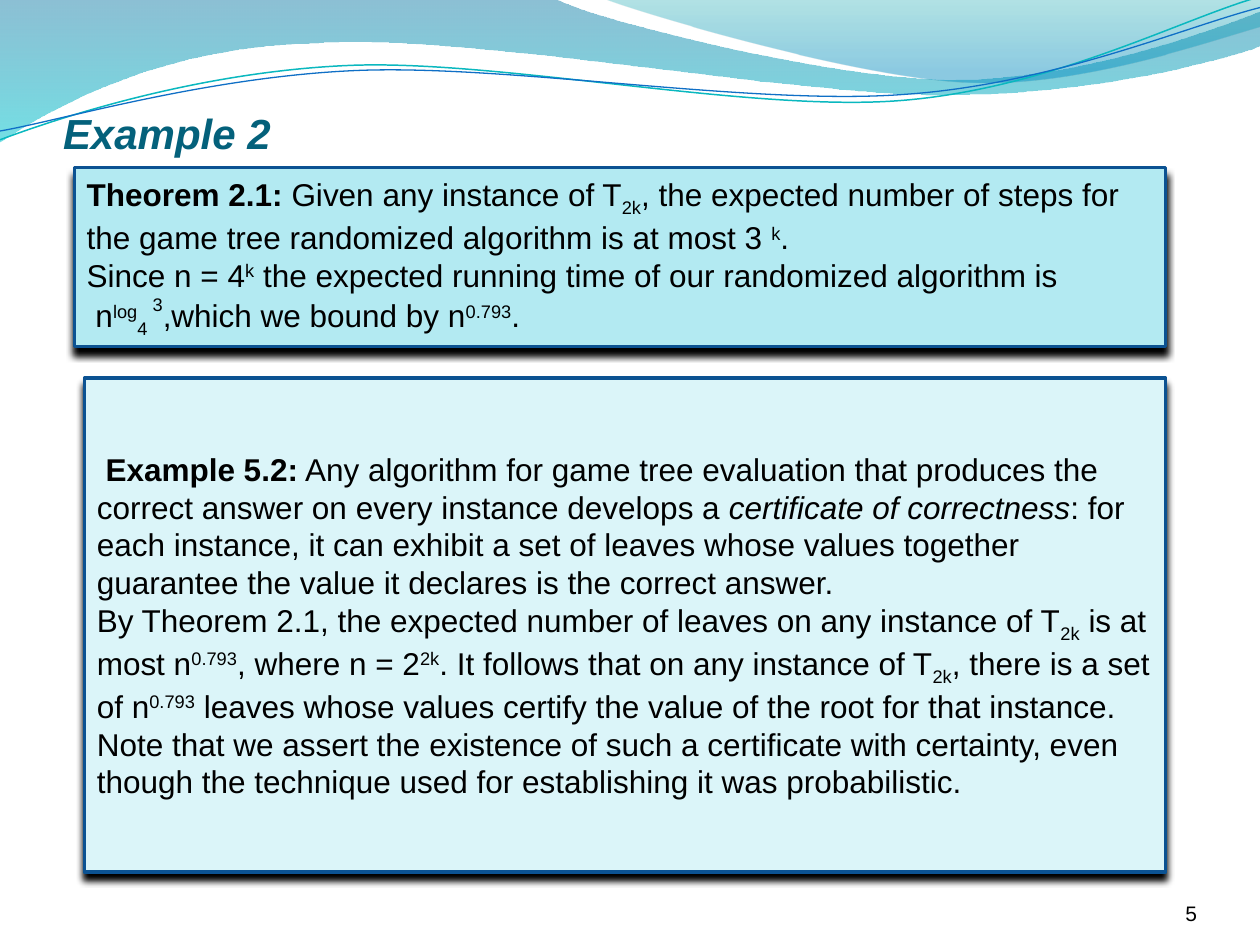
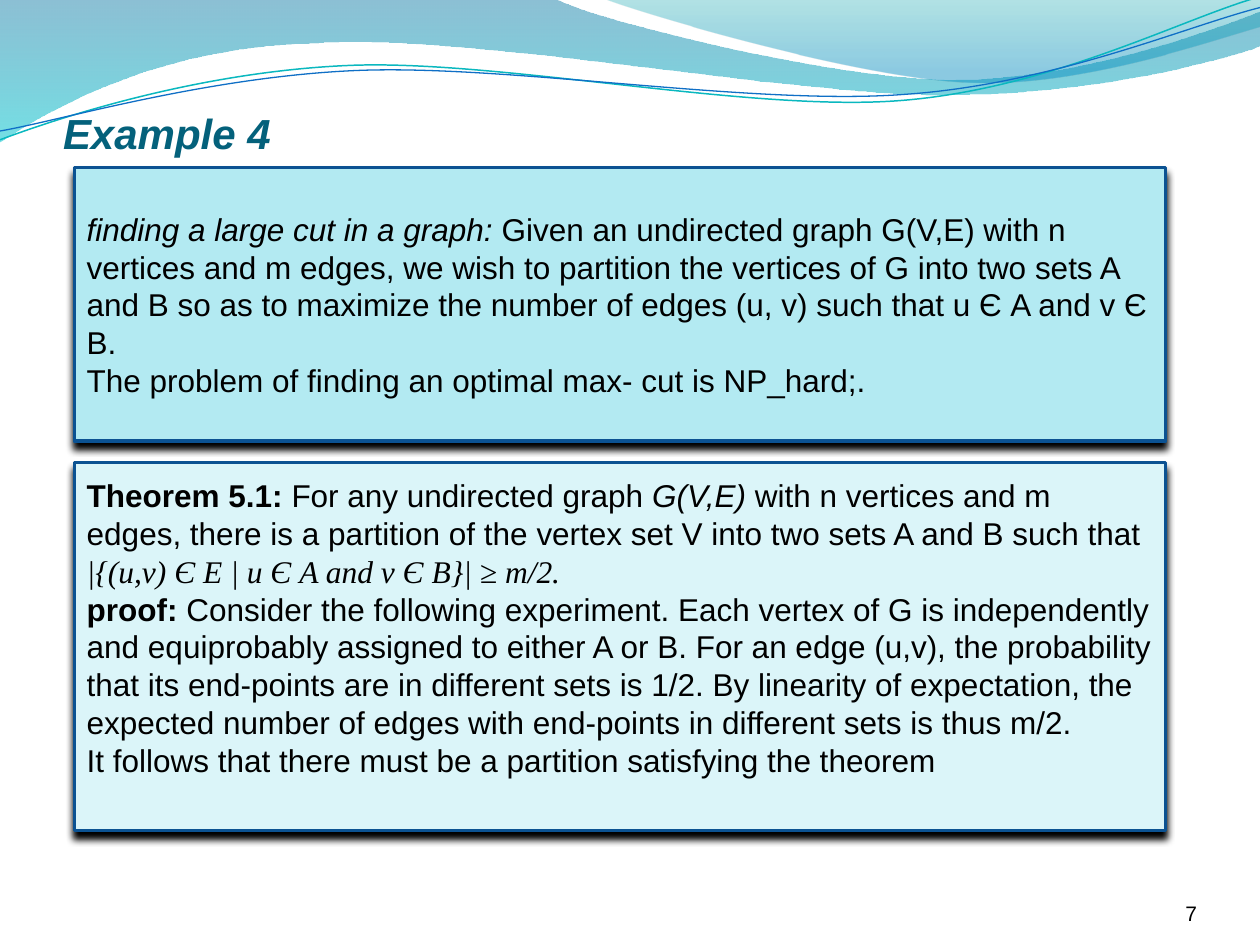
from typing import NamedTuple

from lxml import etree
from pptx import Presentation, util as u
from pptx.dml.color import RGBColor
from pptx.enum import shapes as shp, text as txt
from pptx.oxml import ns

COLORS = {
    "title": "04617B", "ink": "000000", "statement": "B3EAF2", "argument": "DBF5F9",
    "border": "0B5292", "deep": "0074A1", "aqua": "00C6CF", "teal": "00A1A9",
    "sky": "008BBF", "teal line": "0AB8BF", "blue line": "0F6FC6",
}
SANS, SERIF = "Arial", "Times New Roman"
EDGE, PANEL_WIDTH = 0.59, 8.66


class Run(NamedTuple):
    """A stretch of text with one format; base is the raise in percent."""
    text: str
    bold: bool = False
    italic: bool = False
    base: int = 0
    font: str = SANS


class Stop(NamedTuple):
    """A gradient stop with its opacity in percent."""
    position: float
    color: str
    opacity: int


class Wave(NamedTuple):
    """A curved outline: segments are lines when pairs, Bezier curves when sixes."""
    start: tuple
    segments: list
    stops: tuple = ()
    line: str = ""
    weight: float = 0


class Panel(NamedTuple):
    """A bordered text panel."""
    left: float
    top: float
    width: float
    height: float
    fill: str
    paragraphs: list
    bottom_inset: float = 0.05


class Page(NamedTuple):
    """The content of one slide."""
    title: str
    number: str
    panels: list


WAVES = [
    Wave((0, 0), [(4.4, -0.01), (4.76, 0.17, 6.64, 0.63, 7.58, 0.63),
                  (8.53, 0.63, 9.58, 0.26, 10, 0.09), (10.01, 0.36),
                  (9.83, 0.44, 8.7, 0.76, 7.46, 0.75), (6.22, 0.75, 3.82, 0.28, 2.57, 0.34),
                  (1.29, 0.36, 0.46, 0.83, -0.01, 1.13), (0, 0)],
         stops=(Stop(0, "deep", 45), Stop(1, "aqua", 55))),
    Wave((4.79, -0.01), [(5.09, 0.11, 6.82, 0.62, 7.69, 0.65),
                         (8.56, 0.69, 9.61, 0.32, 10, 0.21), (10, 0), (4.79, -0.01)],
         stops=(Stop(0, "teal", 30), Stop(0.8, "sky", 45))),
    Wave((0, 1.11), [(0.48, 0.93, 1.58, 0.57, 2.77, 0.52), (3.95, 0.47, 5.93, 0.89, 7.13, 0.8),
                     (8.33, 0.71, 9.38, 0.15, 9.98, -0.02)], line="teal line", weight=0.85),
    Wave((0, 1.04), [(0.47, 0.96, 1.64, 0.61, 2.83, 0.56), (4.03, 0.51, 5.97, 0.84, 7.17, 0.75),
                     (8.36, 0.67, 9.41, 0.21, 10, 0.06)], line="blue line", weight=0.75),
]


def sub(label: str) -> Run:
    """Return a subscript run."""
    return Run(label, base=-25)


def sup(label: str) -> Run:
    """Return a superscript run."""
    return Run(label, base=30)


PAGES = [
    Page("Example 2", "5", [
        Panel(EDGE, 1.33, PANEL_WIDTH, 1.42, "statement", [
            [Run("Theorem 2.1: ", bold=True), Run("Given any instance of T"), sub("2k"),
             Run(", the expected number of steps for the game tree randomized algorithm "
                 "is at most 3 "), sup("k"), Run(".")],
            [Run("Since n = 4"), sup("k"),
             Run(" the expected running time of our randomized algorithm is")],
            [Run(" n"), sup("log"), sub("4 "), Run("3", base=50),
             Run(",which we bound by n"), sup("0.793"), Run(".")],
        ]),
        Panel(0.67, 3, 8.58, 3.92, "argument", [
            [Run(" Example 5.2:", bold=True),
             Run(" Any algorithm for game tree evaluation that produces the correct answer "
                 "on every instance develops a "),
             Run("certificate of correctness", italic=True),
             Run(": for each instance, it can exhibit a set of leaves whose values together "
                 "guarantee the value it declares is the correct answer.")],
            [Run("By Theorem 2.1, the expected number of leaves on any instance of T"),
             sub("2k"), Run(" is at most n"), sup("0.793"), Run(", where n = 2"), sup("2k"),
             Run(". It follows that on any instance of T"), sub("2k"),
             Run(", there is a set of n"), sup("0.793"),
             Run(" leaves whose values certify the value of the root for that instance.")],
            [Run("Note that we assert the existence of such a certificate with certainty, even "
                 "though the technique used for establishing it was probabilistic.")],
        ]),
    ]),
    Page("Example 4", "7", [
        Panel(EDGE, 1.33, PANEL_WIDTH, 2.17, "statement", [
            [Run("finding a large cut in a graph: ", italic=True),
             Run("Given an undirected graph G(V,E) with n vertices and m edges, we wish to "
                 "partition the vertices of G into two sets A and B so as to maximize the "
                 "number of edges (u, v) such that u Є A and v Є B.")],
            [Run("The problem of finding an optimal max- cut is NP_hard;.")],
        ]),
        Panel(EDGE, 3.67, PANEL_WIDTH, 2.92, "argument", [
            [Run("Theorem 5.1: ", bold=True), Run("For any undirected graph "),
             Run("G(V,E) ", italic=True),
             Run("with n vertices and m edges, there is a partition of the vertex set V into "
                 "two sets A and B such that "),
             Run("|{(u,v) Є E | u Є A and v Є B}| ≥ m/2.", italic=True, font=SERIF)],
            [Run("proof: ", bold=True),
             Run("Consider the following experiment. Each vertex of G is independently and "
                 "equiprobably assigned to either A or B. For an edge (u,v), the probability "
                 "that its end-points are in different sets is 1/2. By linearity of "
                 "expectation, the expected number of edges with end-points in different sets "
                 "is thus m/2.")],
            [Run("It follows that there must be a partition satisfying the theorem")],
        ], bottom_inset=0.35),
    ]),
]


def rgb(name: str) -> RGBColor:
    """Look up a named colour."""
    return RGBColor.from_string(COLORS[name])


def write_text(frame, paragraphs: list, *, size: float = 18, color: str = "ink",
               align=txt.PP_ALIGN.LEFT, anchor=txt.MSO_ANCHOR.MIDDLE,
               insets: tuple = (0.1, 0.05, 0.1, 0.05)) -> None:
    """Fill a text frame with paragraphs made of runs."""
    frame.word_wrap = True
    frame.auto_size = txt.MSO_AUTO_SIZE.NONE
    frame.vertical_anchor = anchor
    frame.margin_left, frame.margin_top, frame.margin_right, frame.margin_bottom = map(
        u.Inches, insets)
    for index, runs in enumerate(paragraphs):
        paragraph = frame.add_paragraph() if index else frame.paragraphs[0]
        paragraph.alignment = align
        for part in runs:
            run = paragraph.add_run()
            run.text = part.text
            run.font.name, run.font.size = part.font, u.Pt(size)
            run.font.bold, run.font.italic = part.bold, part.italic
            run.font.color.rgb = rgb(color)
            if part.base:
                run._r.get_or_add_rPr().set("baseline", str(part.base * 1000))


def bend(band, segments: list) -> None:
    """Turn each three straight steps of a six-number segment into one Bezier curve."""
    steps = iter(list(band.element.iter(ns.qn("a:lnTo"))))
    for segment in segments:
        first = next(steps)
        if len(segment) == 2:
            continue
        curve = etree.Element(ns.qn("a:cubicBezTo"))
        first.addprevious(curve)
        for step in (first, next(steps), next(steps)):
            curve.append(step[0])
            step.getparent().remove(step)


def draw_wave(slide, wave: Wave):
    """Draw a gradient band or a thin curved line."""
    builder = slide.shapes.build_freeform(*map(u.Inches, wave.start))
    points = [(u.Inches(segment[i]), u.Inches(segment[i + 1]))
              for segment in wave.segments for i in range(0, len(segment), 2)]
    builder.add_line_segments(points, close=bool(wave.stops))
    band = builder.convert_to_shape()
    bend(band, wave.segments)
    band.shadow.inherit = False
    if wave.line:
        band.fill.background()
        band.line.color.rgb = rgb(wave.line)
        band.line.width = u.Pt(wave.weight)
        return band
    band.line.fill.background()
    band.fill.gradient()
    band.fill.gradient_angle = 270
    for target, stop in zip(band.fill.gradient_stops, wave.stops):
        target.position, target.color.rgb = stop.position, rgb(stop.color)
    for tint, stop in zip(band.element.iter(ns.qn("a:srgbClr")), wave.stops):
        etree.SubElement(tint, ns.qn("a:alpha"), val=str(stop.opacity * 1000))
    return band


def draw_panel(slide, panel: Panel) -> None:
    """Draw a bordered panel with a drop shadow and its text."""
    box = slide.shapes.add_shape(shp.MSO_SHAPE.RECTANGLE, *map(u.Inches, panel[:4]))
    box.fill.solid()
    box.fill.fore_color.rgb = rgb(panel.fill)
    box.line.color.rgb = rgb("border")
    box.line.width = u.Pt(2)
    box.shadow.inherit = False
    effects = box.element.spPr.find(ns.qn("a:effectLst"))
    drop = etree.SubElement(effects, ns.qn("a:outerShdw"), blurRad=str(u.Pt(4)),
                            dist=str(u.Pt(4)), dir="5400000", rotWithShape="0")
    etree.SubElement(drop, ns.qn("a:srgbClr"), val=COLORS["ink"])
    write_text(box.text_frame, panel.paragraphs, insets=(0.1, 0.05, 0.1, panel.bottom_inset))


def draw_page(slide, page: Page) -> None:
    """Set the title, the page number and the panels of a slide."""
    title = slide.shapes.title
    title.left, title.top, title.width, title.height = map(u.Inches, (0.5, 0.58, 9, 0.67))
    write_text(title.text_frame, [[Run(page.title, bold=True, italic=True)]], size=24,
               color="title", anchor=txt.MSO_ANCHOR.BOTTOM, insets=(0, 0.05, 0, 0))
    number = slide.shapes.add_textbox(*map(u.Inches, (8.67, 6.95, 0.83, 0.4)))
    write_text(number.text_frame, [[Run(page.number)]], size=12, align=txt.PP_ALIGN.RIGHT,
               anchor=txt.MSO_ANCHOR.BOTTOM, insets=(0, 0, 0, 0))
    for panel in page.panels:
        draw_panel(slide, panel)


def main() -> None:
    """Build the deck, with the waves shared through the layout."""
    deck = Presentation()
    deck.slide_width, deck.slide_height = u.Inches(10), u.Inches(7.5)
    layout = deck.slide_layouts.get_by_name("Title Only")
    for footer in list(layout.placeholders)[1:]:
        layout.shapes.element.remove(footer.element)
    slides = [deck.slides.add_slide(layout) for _ in PAGES]
    for wave in WAVES:
        layout.shapes.element.append(draw_wave(slides[0], wave).element)
    for slide, page in zip(slides, PAGES):
        draw_page(slide, page)
    deck.save("out.pptx")


if __name__ == "__main__":
    main()
